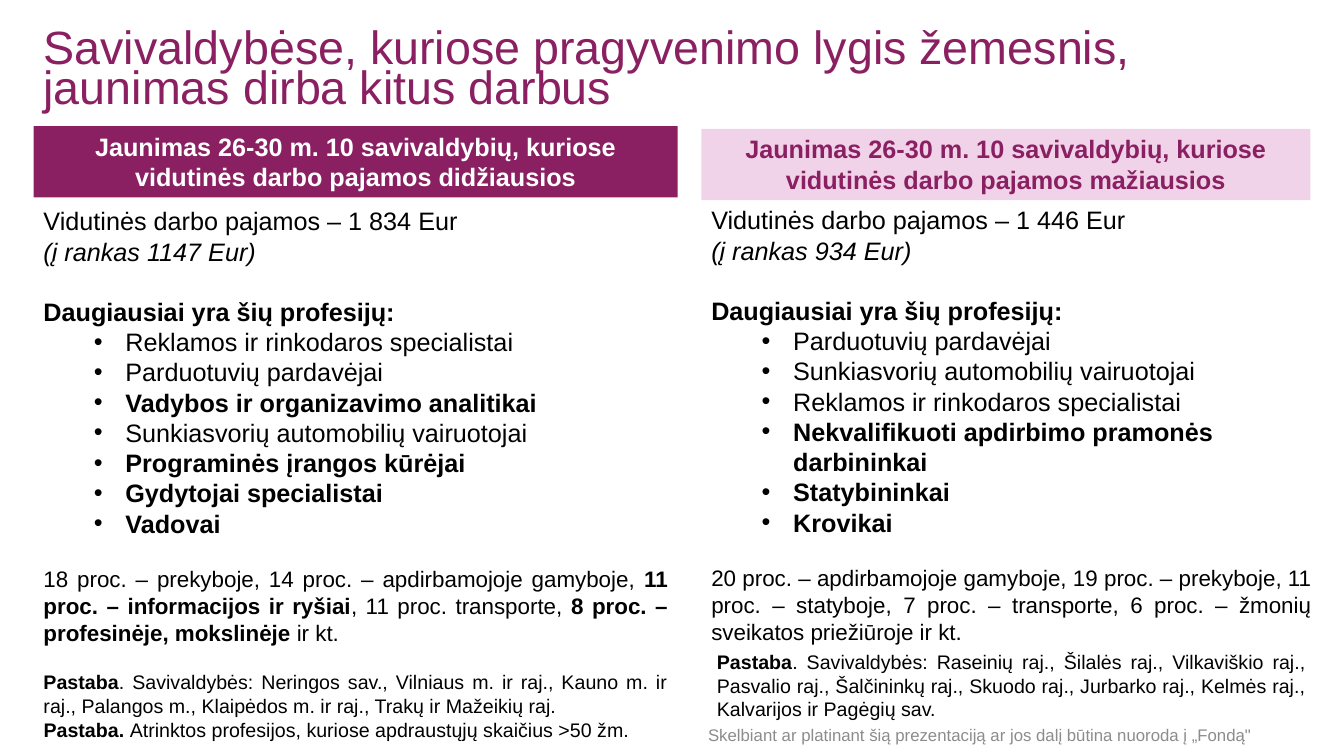
"""Build a slide comparing young people's jobs in high- and low-income municipalities."""
from pptx import Presentation
from pptx.dml.color import RGBColor
from pptx.enum.shapes import MSO_SHAPE
from pptx.enum.text import MSO_ANCHOR, PP_ALIGN
from pptx.oxml.ns import qn
from pptx.util import Pt

PLUM, PINK, GREY, BLACK, WHITE = "8A2062", "F1D3E9", "8C8C8C", "000000", "FFFFFF"
FONT = "Arial"
LEFT, COLUMN_WIDTH = 24, 460
BULLET_MARGIN, BULLET_HANG = 58.5, 22.5
GAP_BEFORE_JOBS, GAP_BEFORE_SECTORS = 21.5, 19.3

TITLE = "Savivaldybėse, kuriose pragyvenimo lygis žemesnis, jaunimas dirba kitus darbus"
FOOTER = "Skelbiant ar platinant šią prezentaciją ar jos dalį būtina nuoroda į „Fondą\""
JOBS_HEADING = "Daugiausiai yra šių profesijų:"

COLUMNS = [
    {
        "header": "Jaunimas 26-30 m. 10 savivaldybių, kuriose vidutinės darbo pajamos didžiausios",
        "header_box": (LEFT, 90, COLUMN_WIDTH, 51), "fill": PLUM, "color": WHITE,
        "body_box": (LEFT, 143.3, COLUMN_WIDTH, 325),
        "income": "Vidutinės darbo pajamos – 1 834 Eur",
        "net": "(į rankas 1147 Eur)",
        "jobs": [
            ("Reklamos ir rinkodaros specialistai", False),
            ("Parduotuvių pardavėjai", False),
            ("Vadybos ir organizavimo analitikai", True),
            ("Sunkiasvorių automobilių vairuotojai", False),
            ("Programinės įrangos kūrėjai", True),
            ("Gydytojai specialistai", True),
            ("Vadovai", True),
        ],
        "sectors": [
            ("18 proc. – prekyboje, 14 proc. – apdirbamojoje gamyboje, ", False),
            ("11 proc. – informacijos ir ryšiai", True),
            (", 11 proc. transporte, ", False),
            ("8 proc. – profesinėje, mokslinėje ", True),
            ("ir kt.", False),
        ],
    },
    {
        "header": "Jaunimas 26-30 m. 10 savivaldybių, kuriose vidutinės darbo pajamos mažiausios",
        "header_box": (501, 92, 435, 51), "fill": PINK, "color": PLUM,
        "body_box": (501, 142.6, 443, 325),
        "income": "Vidutinės darbo pajamos – 1 446 Eur",
        "net": "(į rankas 934 Eur)",
        "jobs": [
            ("Parduotuvių pardavėjai", False),
            ("Sunkiasvorių automobilių vairuotojai", False),
            ("Reklamos ir rinkodaros specialistai", False),
            ("Nekvalifikuoti apdirbimo pramonės darbininkai", True),
            ("Statybininkai", True),
            ("Krovikai", True),
        ],
        "sectors": [
            ("20 proc. – apdirbamojoje gamyboje, 19 proc. – prekyboje, 11 proc. – statyboje, "
             "7 proc. – transporte, 6 proc. – žmonių sveikatos priežiūroje ir kt.", False),
        ],
    },
]

NOTES = [
    ((LEFT, 509.6, 732, 24.5), PP_ALIGN.LEFT, [
        ("Pastaba. ", True),
        ("Atrinktos profesijos, kuriose apdraustųjų skaičius >50 žm.", False)]),
    ((LEFT, 475, COLUMN_WIDTH, 41), PP_ALIGN.JUSTIFY, [
        ("Pastaba", True),
        (". Savivaldybės: Neringos sav., Vilniaus m. ir raj., Kauno m. ir raj., "
         "Palangos m., Klaipėdos m. ir raj., Trakų ir Mažeikių raj. ", False)]),
    ((505, 461, 435, 58), PP_ALIGN.JUSTIFY, [
        ("Pastaba", True),
        (". Savivaldybės: Raseinių raj., Šilalės raj., Vilkaviškio raj., Pasvalio raj., "
         "Šalčininkų raj., Skuodo raj., Jurbarko raj., Kelmės raj., "
         "Kalvarijos ir Pagėgių sav.", False)]),
]


def rgb(color):
    return RGBColor.from_string(color)


def add_box(s, box, anchor=MSO_ANCHOR.TOP):
    tf = s.shapes.add_textbox(*map(Pt, box)).text_frame
    tf.word_wrap = True
    tf.vertical_anchor = anchor
    return tf


def write(p, parts, size, color=BLACK, align=PP_ALIGN.LEFT, italic=False):
    p.alignment = align
    for text, bold in parts:
        r = p.add_run()
        r.text = text
        r.font.name, r.font.size = FONT, Pt(size)
        r.font.bold, r.font.italic = bold, italic
        r.font.color.rgb = rgb(color)


def add_bullet(p):
    pPr = p._p.get_or_add_pPr()
    pPr.set("marL", str(Pt(BULLET_MARGIN)))
    pPr.set("indent", str(-Pt(BULLET_HANG)))
    pPr.makeelement(qn("a:buFont"), {"typeface": FONT})
    for tag, attrs in (("a:buFont", {"typeface": FONT}), ("a:buChar", {"char": "•"})):
        pPr.append(pPr.makeelement(qn(tag), attrs))


def add_header(s, column):
    sp = s.shapes.add_shape(MSO_SHAPE.RECTANGLE, *map(Pt, column["header_box"]))
    sp.shadow.inherit = False
    sp.fill.solid()
    sp.fill.fore_color.rgb = rgb(column["fill"])
    sp.line.fill.background()
    tf = sp.text_frame
    tf.word_wrap = True
    tf.vertical_anchor = MSO_ANCHOR.TOP
    write(tf.paragraphs[0], [(column["header"], True)], 18, column["color"], PP_ALIGN.CENTER)


def add_body(s, column):
    tf = add_box(s, column["body_box"])
    write(tf.paragraphs[0], [(column["income"], False)], 18)
    write(tf.add_paragraph(), [(column["net"], False)], 18, italic=True)
    p = tf.add_paragraph()
    p.space_before = Pt(GAP_BEFORE_JOBS)
    write(p, [(JOBS_HEADING, True)], 18)
    for job in column["jobs"]:
        p = tf.add_paragraph()
        p.level = 1
        write(p, [job], 18)
        add_bullet(p)
    p = tf.add_paragraph()
    p.space_before = Pt(GAP_BEFORE_SECTORS)
    write(p, column["sectors"], 16, align=PP_ALIGN.JUSTIFY)


def main():
    prs = Presentation()
    prs.slide_width, prs.slide_height = Pt(960), Pt(540)
    s = prs.slides.add_slide(prs.slide_layouts[6])

    p = add_box(s, (LEFT, 20, 927, 64), MSO_ANCHOR.MIDDLE).paragraphs[0]
    p.line_spacing = 0.7
    write(p, [(TITLE, False)], 33.3, PLUM)
    p = add_box(s, (493, 510.5, 414, 29), MSO_ANCHOR.MIDDLE).paragraphs[0]
    write(p, [(FOOTER, False)], 12, GREY, PP_ALIGN.CENTER)

    for column in COLUMNS:
        add_header(s, column)
        add_body(s, column)
    for box, align, parts in NOTES:
        write(add_box(s, box).paragraphs[0], parts, 14, align=align)

    prs.save("out.pptx")


if __name__ == "__main__":
    main()
